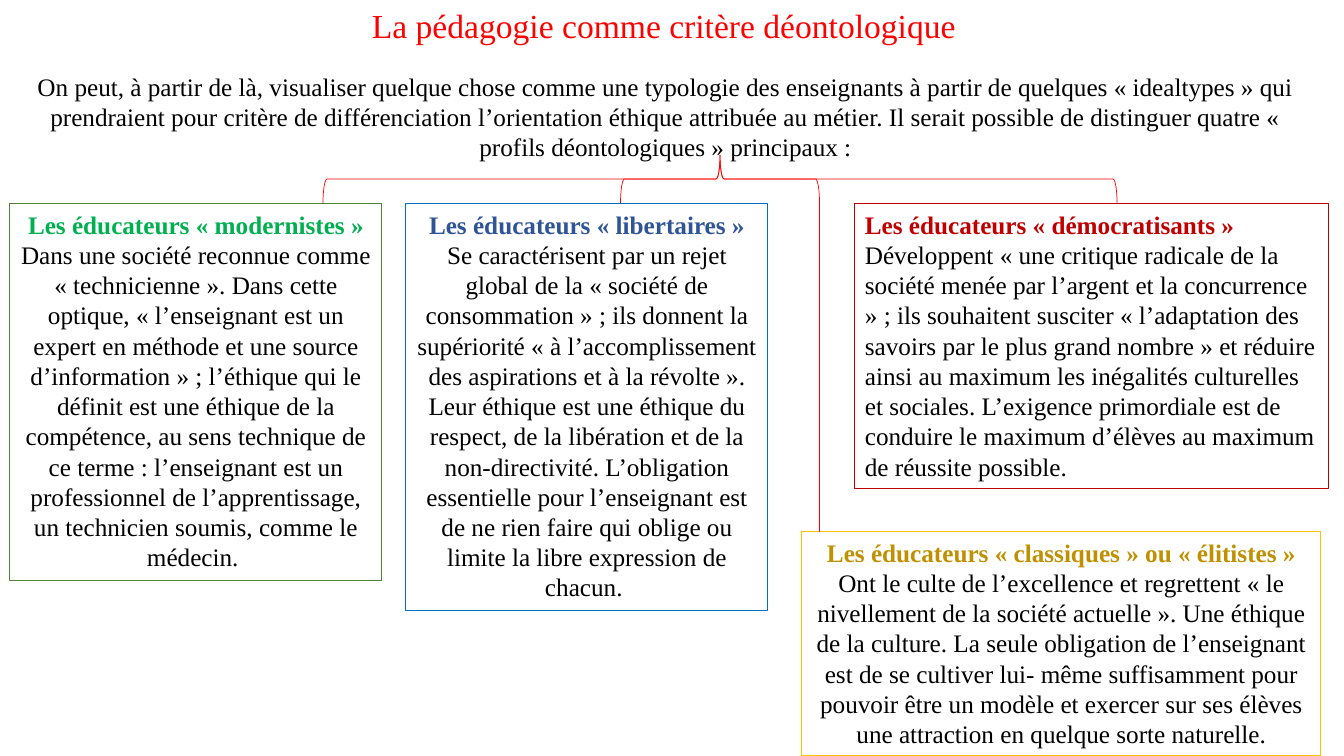
from pptx import Presentation
from pptx import util as u
from pptx.dml.color import RGBColor
from pptx.enum import shapes, text
from pptx.oxml.ns import qn
from lxml import etree

PX = 914400 / 100.8
FONT = "Times New Roman"
BLACK, RED = "000000", "FF0000"
LEFT, MID = text.PP_ALIGN.LEFT, text.PP_ALIGN.CENTER

TITLE = "La pédagogie comme critère déontologique"
INTRO = (
    "On peut, à partir de là, visualiser quelque chose comme une typologie des enseignants "
    "à partir de quelques « idealtypes » qui prendraient pour critère de différenciation "
    "l’orientation éthique attribuée au métier. Il serait possible de distinguer quatre "
    "« profils déontologiques » principaux :")

# Profiles: box (left, top, width, height), line, heading colour, alignment, heading, body
PROFILES = [
    ((10, 204, 372, 377), "548235", "00B050", MID,
     "Les éducateurs « modernistes » ",
     "Dans une société reconnue comme « technicienne ». Dans cette optique, « l’enseignant "
     "est un expert en méthode et une source d’information » ; l’éthique qui le définit est "
     "une éthique de la compétence, au sens technique de ce terme : l’enseignant est un "
     "professionnel de l’apprentissage, un technicien soumis, comme le médecin. "),
    ((406, 204, 362, 407), "0070C0", "2F5597", MID,
     "Les éducateurs « libertaires »",
     " Se caractérisent par un rejet global de la « société de consommation » ; ils donnent "
     "la supériorité « à l’accomplissement des aspirations et à la révolte ». Leur éthique "
     "est une éthique du respect, de la libération et de la non-directivité. L’obligation "
     "essentielle pour l’enseignant est de ne rien faire qui oblige ou limite la libre "
     "expression de chacun. "),
    ((802, 532, 519, 224), "FFC000", "BF9000", MID,
     "Les éducateurs « classiques » ou « élitistes » ",
     "Ont le culte de l’excellence et regrettent « le nivellement de la société actuelle ». "
     "Une éthique de la culture. La seule obligation de l’enseignant est de se cultiver lui- "
     "même suffisamment pour pouvoir être un modèle et exercer sur ses élèves une attraction "
     "en quelque sorte naturelle."),
    ((855, 204, 474, 285), "C00000", "C00000", LEFT,
     "Les éducateurs « démocratisants » ",
     "Développent « une critique radicale de la société menée par l’argent et la concurrence "
     "» ; ils souhaitent susciter « l’adaptation des savoirs par le plus grand nombre » et "
     "réduire ainsi au maximum les inégalités culturelles et sociales. L’exigence primordiale "
     "est de conduire le maximum d’élèves au maximum de réussite possible."),
]

# Braces share one tip and differ in span
HUB = (720, 179)
DEPTH = 48
SPANS = [794, 199]
STEM_END = 532


def px(n):
    return round(n * PX)


def rgb(code):
    return RGBColor.from_string(code)


def rule(item, color, pts):
    item.line.color.rgb = rgb(color)
    item.line.width = u.Pt(pts)


def write(box, runs, align, size=18, wrap=True):
    item = slide.shapes.add_textbox(*map(px, box))
    frame = item.text_frame
    frame.word_wrap = wrap
    frame.auto_size = text.MSO_AUTO_SIZE.SHAPE_TO_FIT_TEXT
    para = frame.paragraphs[0]
    para.alignment = align
    for words, color, bold in runs:
        run = para.add_run()
        run.text = words
        run.font.name = FONT
        run.font.size = u.Pt(size)
        run.font.bold = bold
        run.font.color.rgb = rgb(color)
    return item


deck = Presentation()
deck.slide_width, deck.slide_height = px(1344), px(756)
slide = deck.slides.add_slide(deck.slide_layouts[6])

# Title and introduction
write((362, 0, 609, 50), [(TITLE, RED, False)], LEFT, 24, False)
write((10, 66, 1311, 102), [(INTRO, BLACK, False)], MID)

# Profile boxes
for box, edge, tint, align, head, body in PROFILES:
    card = write(box, [(head, tint, True), (body, BLACK, False)], align)
    rule(card, edge, 0.75)

# Braces, turned so that the tip points up
mid, level = HUB
for span in SPANS:
    brace = slide.shapes.add_shape(
        shapes.MSO_SHAPE.LEFT_BRACE,
        px(mid - DEPTH / 2), px(level - span / 2), px(DEPTH), px(span))
    brace.rotation = 90
    brace.shadow.inherit = False
    brace.fill.background()
    rule(brace, RED, 0.5)

# Stem from the inner brace down to the lowest box
x = px(mid + SPANS[1] / 2)
stem = slide.shapes.add_connector(
    shapes.MSO_CONNECTOR.STRAIGHT, x, px(level + DEPTH / 2), x, px(STEM_END))
rule(stem, RED, 0.5)
etree.SubElement(stem._element.spPr, qn("a:effectLst"))

deck.save("out.pptx")
